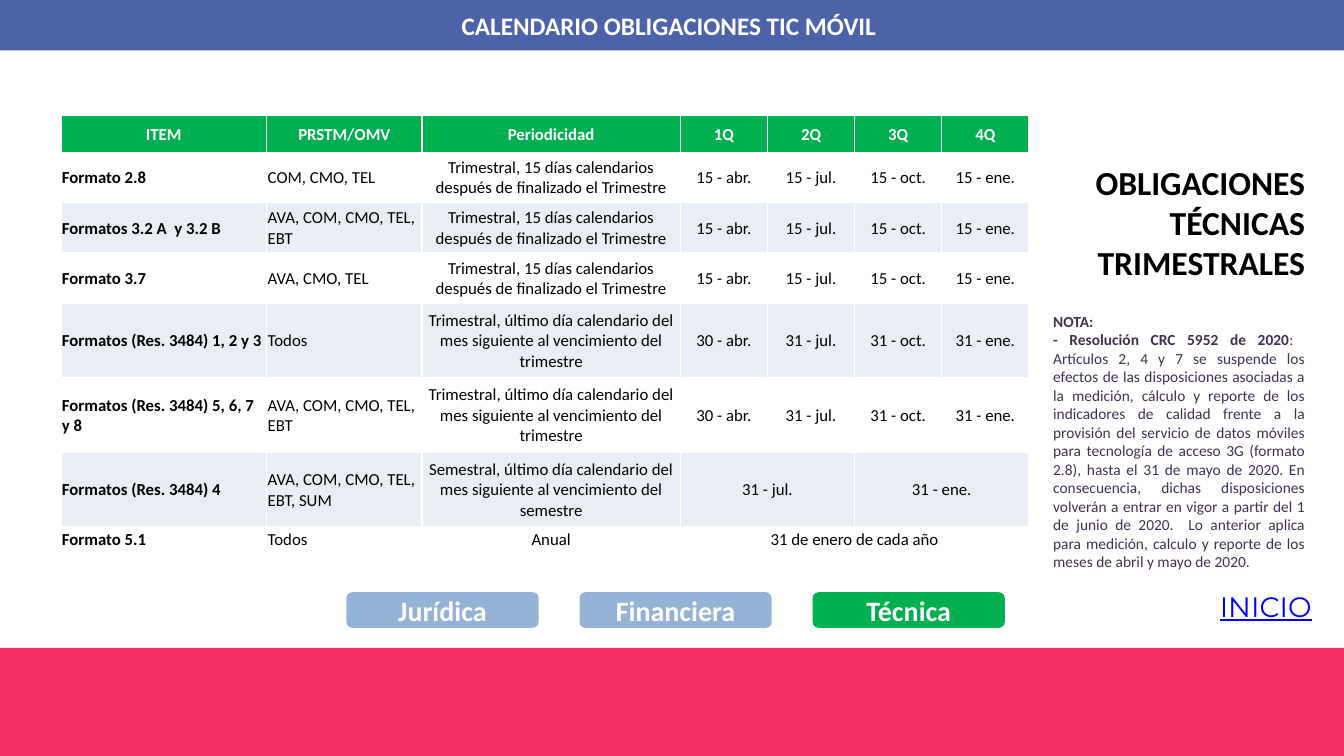
import dataclasses
import typing

import lxml.etree
import pptx
import pptx.dml.color
import pptx.enum.shapes
import pptx.enum.text
import pptx.oxml.ns
import pptx.util

RGB = pptx.dml.color.RGBColor
FORM = pptx.enum.shapes.MSO_SHAPE
ALIGN = pptx.enum.text.PP_ALIGN
MID = pptx.enum.text.MSO_ANCHOR.MIDDLE
TOP = pptx.enum.text.MSO_ANCHOR.TOP
SCALE = 9525

WHITE = RGB(0xFF, 0xFF, 0xFF)
BLACK = RGB(0x00, 0x00, 0x00)
NAVY = RGB(0x4C, 0x63, 0xA9)
PINK = RGB(0xF4, 0x2F, 0x63)
GREEN = RGB(0x00, 0xB0, 0x50)
SKY = RGB(0x95, 0xB3, 0xD7)
BAND = RGB(0xE9, 0xED, 0xF4)
PLUM = RGB(0x40, 0x31, 0x52)
LINK = RGB(0x00, 0x00, 0xFF)


@dataclasses.dataclass(frozen=True)
class Style:
    size: int
    color: RGB
    align: ALIGN = ALIGN.CENTER
    bold: bool = True
    under: bool = False
    face: str = "Calibri"


@dataclasses.dataclass(frozen=True)
class Run:
    text: str
    bold: bool


@dataclasses.dataclass(frozen=True)
class Box:
    left: int
    top: int
    width: int
    height: int
    style: Style
    lines: tuple[tuple[Run, ...], ...] = ()
    fill: typing.Optional[RGB] = None
    form: FORM = FORM.RECTANGLE
    pads: tuple[int, int, int, int] = (10, 5, 10, 5)


HEAD = Style(12, WHITE)
ITEM = Style(12, BLACK, ALIGN.LEFT)
FIRM = Style(12, BLACK, ALIGN.LEFT, False)
DATE = Style(12, BLACK, ALIGN.CENTER, False)
BAR = Style(18, WHITE)
TAB = Style(20, WHITE)
TITLE = Style(24, BLACK, ALIGN.RIGHT)
NOTE = Style(11, PLUM, ALIGN.JUSTIFY)
HOME = Style(20, LINK, bold=False, under=True, face="Montserrat")

COLS = (196, 148, 246, 83, 83, 83, 83)
ROWS = (35, 48, 48, 48, 71, 71, 71, 24)
MID_TERM = "Trimestral, 15 días calendarios después de finalizado el Trimestre"
END_TERM = "Trimestral, último día calendario del mes siguiente al vencimiento del trimestre"
HALF = "Semestral, último día calendario del mes siguiente al vencimiento del semestre"
MID_DAYS = ("15 - abr.", "15 - jul.", "15 - oct.", "15 - ene.")
END_DAYS = ("30 - abr.", "31 - jul.", "31 - oct.", "31 - ene.")
DATA = (
    ("ITEM", "PRSTM/OMV", "Periodicidad", "1Q", "2Q", "3Q", "4Q"),
    ("Formato 2.8", "COM, CMO, TEL", MID_TERM, *MID_DAYS),
    ("Formatos 3.2 A  y 3.2 B", "AVA, COM, CMO, TEL, EBT", MID_TERM, *MID_DAYS),
    ("Formato 3.7", "AVA, CMO, TEL", MID_TERM, *MID_DAYS),
    ("Formatos (Res. 3484) 1, 2 y 3", "Todos", END_TERM, *END_DAYS),
    ("Formatos (Res. 3484) 5, 6, 7 y 8", "AVA, COM, CMO, TEL, EBT", END_TERM, *END_DAYS),
    ("Formatos (Res. 3484) 4", "AVA, COM, CMO, TEL, EBT, SUM", HALF,
     "31 - jul.", None, "31 - ene.", None),
    ("Formato 5.1", "Todos", "Anual", "31 de enero de cada año", None, None, None),
)
SPANS = ((6, 3, 4), (6, 5, 6), (7, 3, 6))

BODY = (
    ":  Artículos 2, 4 y 7 se suspende los efectos de las disposiciones asociadas a la "
    "medición, cálculo y reporte de los indicadores de calidad frente a la provisión del "
    "servicio de datos móviles para tecnología de acceso 3G (formato 2.8), hasta el 31 de "
    "mayo de 2020. En consecuencia, dichas disposiciones volverán a entrar en vigor a partir "
    "del 1 de junio de 2020.  Lo anterior aplica para medición, calculo y reporte de los "
    "meses de abril y mayo de 2020."
)


def px(count: int) -> pptx.util.Emu:
    return pptx.util.Emu(count * SCALE)


def write(para, runs: tuple[Run, ...], style: Style) -> None:
    para.alignment = style.align
    for part in runs:
        run = para.add_run()
        run.text = part.text
        look = {"size": pptx.util.Pt(style.size), "name": style.face,
                "bold": part.bold, "underline": style.under}
        for key, value in look.items():
            setattr(run.font, key, value)
        run.font.color.rgb = style.color


def draw(slide, box: Box) -> None:
    place = [px(n) for n in (box.left, box.top, box.width, box.height)]
    if box.fill is None:
        shape = slide.shapes.add_textbox(*place)
    else:
        shape = slide.shapes.add_shape(box.form, *place)
        shape.shadow.inherit = False
        shape.fill.solid()
        shape.fill.fore_color.rgb = box.fill
        shape.line.fill.background()
    frame = shape.text_frame
    left, top, right, base = box.pads
    look = {"word_wrap": True, "vertical_anchor": TOP if box.fill is None else MID,
            "margin_left": px(left), "margin_top": px(top),
            "margin_right": px(right), "margin_bottom": px(base)}
    for key, value in look.items():
        setattr(frame, key, value)
    for spot, runs in enumerate(box.lines):
        para = frame.add_paragraph() if spot else frame.paragraphs[0]
        write(para, runs, box.style)


def edge(cell) -> None:
    props = cell._tc.get_or_add_tcPr()
    name = pptx.oxml.ns.qn
    for spot, side in enumerate(("lnL", "lnR", "lnT", "lnB")):
        line = lxml.etree.Element(name("a:" + side), w="12700")
        fill = lxml.etree.SubElement(line, name("a:solidFill"))
        lxml.etree.SubElement(fill, name("a:srgbClr"), val=str(WHITE))
        props.insert(spot, line)


def grid(slide) -> None:
    table = slide.shapes.add_table(len(ROWS), len(COLS), px(58), px(110),
                                   px(sum(COLS)), px(sum(ROWS))).table
    table.first_row = table.horz_banding = False
    for col, width in zip(table.columns, COLS):
        col.width = px(width)
    for row, height in zip(table.rows, ROWS):
        row.height = px(height)
    look = {"vertical_anchor": MID, "margin_left": px(1), "margin_top": px(1),
            "margin_right": px(1), "margin_bottom": px(0)}
    for y, texts in enumerate(DATA):
        for x, text in enumerate(texts):
            cell = table.cell(y, x)
            for key, value in look.items():
                setattr(cell, key, value)
            if y % 2 and y:
                cell.fill.background()
            else:
                cell.fill.solid()
                cell.fill.fore_color.rgb = BAND if y else GREEN
            edge(cell)
            style = HEAD if y == 0 else (ITEM, FIRM, DATE)[min(x, 2)]
            if text:
                write(cell.text_frame.paragraphs[0], (Run(text, style.bold),), style)
    for y, first, last in SPANS:
        table.cell(y, first).merge(table.cell(y, last))


def line(text: str, bold: bool = True) -> tuple[Run, ...]:
    return (Run(text, bold),)


def main() -> None:
    deck = pptx.Presentation()
    deck.slide_width, deck.slide_height = px(1280), px(720)
    slide = deck.slides.add_slide(deck.slide_layouts[6])
    draw(slide, Box(0, 617, 1280, 103, BAR, fill=PINK))
    draw(slide, Box(0, 0, 1280, 48, BAR, (line("CALENDARIO OBLIGACIONES TIC MÓVIL"),),
                    NAVY, pads=(10, 5, 16, 5)))
    draw(slide, Box(286, 557, 712, 50, TAB, fill=WHITE, form=FORM.ROUNDED_RECTANGLE))
    tabs = (("Jurídica", SKY), ("Financiera", SKY), ("Técnica", GREEN))
    for spot, (text, fill) in enumerate(tabs):
        draw(slide, Box(330 + 222 * spot, 564, 183, 34, TAB, (line(text),), fill,
                        FORM.ROUNDED_RECTANGLE))
    draw(slide, Box(1028, 149, 225, 126, TITLE,
                    (line("OBLIGACIONES TÉCNICAS"), line("TRIMESTRALES"))))
    grid(slide)
    draw(slide, Box(993, 292, 260, 258, NOTE, (
        line("NOTA:"),
        (Run("- Resolución CRC 5952 de 2020", True), Run(BODY, False)))))
    draw(slide, Box(1139, 552, 133, 50, HOME, (line("INICIO", False),), WHITE,
                    FORM.ROUNDED_RECTANGLE))
    deck.save("out.pptx")


if __name__ == "__main__":
    main()
